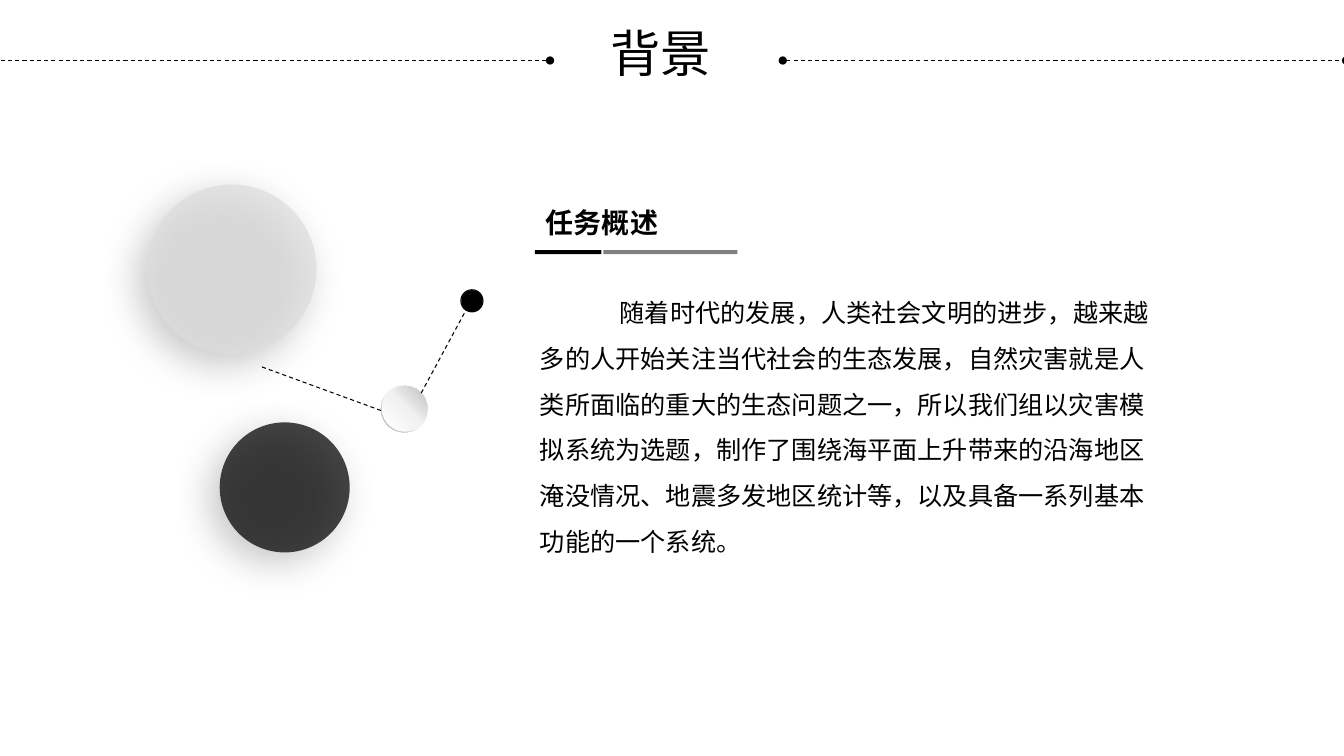
from copy import deepcopy

from lxml import etree
from pptx import Presentation
from pptx.dml.color import RGBColor
from pptx.enum import dml, shapes, text
from pptx.oxml import ns
from pptx.util import Pt

BLACK = RGBColor(0x00, 0x00, 0x00)
WHITE = RGBColor(0xFF, 0xFF, 0xFF)
PALE = RGBColor(0xF2, 0xF2, 0xF2)
SILVER = RGBColor(0xBF, 0xBF, 0xBF)
RIM_GRAY = RGBColor(0xA6, 0xA6, 0xA6)
DISC_GRAY = RGBColor(0xDD, 0xDD, 0xDD)
BAR_GRAY = RGBColor(0x80, 0x80, 0x80)

FONT = "Noto Sans CJK SC"
RULE_Y = 43.2
RIM = 0.7

OVERVIEW = (
    "随着时代的发展，人类社会文明的进步，越来越多的人开始关注当代社会的生态发展，"
    "自然灾害就是人类所面临的重大的生态问题之一，所以我们组以灾害模拟系统为选题，"
    "制作了围绕海平面上升带来的沿海地区淹没情况、地震多发地区统计等，"
    "以及具备一系列基本功能的一个系统。"
)


def add_xml(parent, tag, **attributes):
    return etree.SubElement(parent, ns.qn(tag), **attributes)


def place(shape, left, top, width, height):
    shape.left, shape.top = Pt(left), Pt(top)
    shape.width, shape.height = Pt(width), Pt(height)


def write(box, words, size, bold=False, wrap=True, margins=(5, 2.9),
          anchor=text.MSO_ANCHOR.MIDDLE):
    """Fill a text shape with one left-aligned paragraph and return it."""
    frame = box.text_frame
    frame.word_wrap = wrap
    frame.auto_size = text.MSO_AUTO_SIZE.NONE
    frame.vertical_anchor = anchor
    frame.margin_left = frame.margin_right = Pt(margins[0])
    frame.margin_top = frame.margin_bottom = Pt(margins[1])
    paragraph = frame.paragraphs[0]
    paragraph.alignment = text.PP_ALIGN.LEFT
    paragraph.space_before = Pt(0)
    run = paragraph.add_run()
    run.text = words
    run.font.name, run.font.size, run.font.bold = FONT, Pt(size), bold
    run.font.color.rgb = BLACK
    add_xml(run.font._element, "a:ea", typeface=FONT)
    return paragraph


def add_dashed_line(slide, start, end, dotted_ends=False):
    line = slide.shapes.add_connector(
        shapes.MSO_CONNECTOR.STRAIGHT, *(Pt(value) for value in start + end))
    line.line.color.rgb = BLACK
    line.line.width = Pt(0.75)
    line.line.dash_style = dml.MSO_LINE.DASH
    if dotted_ends:
        outline = line.line._get_or_add_ln()
        for tag in ("a:headEnd", "a:tailEnd"):
            add_xml(outline, tag, type="oval")
    add_xml(line._element.spPr, "a:effectLst")


def add_plain_shape(target, kind, left, top, width, height, color=None):
    shape = target.shapes.add_shape(kind, Pt(left), Pt(top), Pt(width), Pt(height))
    shape.shadow.inherit = False
    shape.line.fill.background()
    if color is not None:
        shape.fill.solid()
        shape.fill.fore_color.rgb = color
    return shape


def add_glass_disc(slide, left, top, size, color):
    """Translucent disc with a soft shadow to the lower left."""
    disc = add_plain_shape(slide, shapes.MSO_SHAPE.OVAL, left, top, size, size, color)
    properties = disc._element.spPr
    fill_color = properties.find(ns.qn("a:solidFill"))[0]
    add_xml(fill_color, "a:alpha", val="73000")
    shadow = add_xml(properties.find(ns.qn("a:effectLst")), "a:outerShdw",
                     blurRad=str(Pt(28)), dist=str(Pt(10)), dir=str(135 * 60000),
                     algn="tr", rotWithShape="0")
    shadow_color = add_xml(shadow, "a:srgbClr", val=str(BLACK))
    add_xml(shadow_color, "a:alpha", val="30000")


def shade(shape, colors, middle, angle):
    """Three-stop gradient; the angle runs counter-clockwise."""
    shape.fill.gradient()
    shape.fill.gradient_angle = angle
    stop_list = shape._element.spPr.find(ns.qn("a:gradFill")).find(ns.qn("a:gsLst"))
    stop_list.append(deepcopy(stop_list[0]))
    for stop, color, position in zip(shape.fill.gradient_stops, colors, (0, middle, 1)):
        stop.color.rgb = color
        stop.position = position


def add_rimmed_ball(slide, left, top, size, color=None):
    """Ball inside a thin ring, grouped."""
    ball = slide.shapes.add_group_shape()
    rim = add_plain_shape(ball, shapes.MSO_SHAPE.DONUT, left, top, size, size, color)
    rim.adjustments[0] = 0.05
    core_size = size - 2 * RIM
    core = add_plain_shape(ball, shapes.MSO_SHAPE.OVAL, left + RIM, top + RIM,
                           core_size, core_size, color)
    return rim, core


def add_network(slide):
    add_dashed_line(slide, (187.2, 262.1), (283.7, 297.4))
    add_glass_disc(slide, 157, 301.7, 92.9, BLACK)
    add_glass_disc(slide, 105.1, 131.8, 121, DISC_GRAY)
    rim, core = add_rimmed_ball(slide, 272.3, 275, 33.8)
    shade(rim, (WHITE, PALE, RIM_GRAY), 0.55, 225)
    shade(core, (WHITE, PALE, SILVER), 0.51, 45)
    add_dashed_line(slide, (301, 280.8), (334.8, 218.2))
    add_rimmed_ball(slide, 329, 206.6, 16.6, BLACK)


def add_heading(slide):
    heading = slide.shapes.add_textbox(Pt(385.2), Pt(141), Pt(91.4), Pt(36))
    write(heading, "任务概述", 20, bold=True, wrap=False)
    for left, width, color in ((382.3, 47.5, BLACK), (431.3, 95.8, BAR_GRAY)):
        add_plain_shape(slide, shapes.MSO_SHAPE.RECTANGLE, left, 178.6, width, 2.9, color)


def add_overview(body):
    place(body, 380.9, 198.7, 453.6, 201.6)
    paragraph = write(body, OVERVIEW, 18, anchor=text.MSO_ANCHOR.TOP)
    paragraph.line_spacing = Pt(32.6)
    settings = paragraph._p.get_or_add_pPr()
    settings.set("marL", "0")
    settings.set("indent", str(Pt(57)))
    add_xml(settings, "a:buNone")


def main():
    deck = Presentation()
    deck.slide_width, deck.slide_height = Pt(960.48), Pt(540)
    slide = deck.slides.add_slide(deck.slide_layouts[1])
    title, body = slide.placeholders

    place(title, 429.1, 19, 96.5, 36.7)
    write(title, "背景", 36, margins=(7.2, 3.6))
    for left, right in ((-7.2, 393.1), (559.4, 962)):
        add_dashed_line(slide, (left, RULE_Y), (right, RULE_Y), dotted_ends=True)

    add_network(slide)
    add_heading(slide)
    add_overview(body)
    deck.save("out.pptx")


if __name__ == "__main__":
    main()
